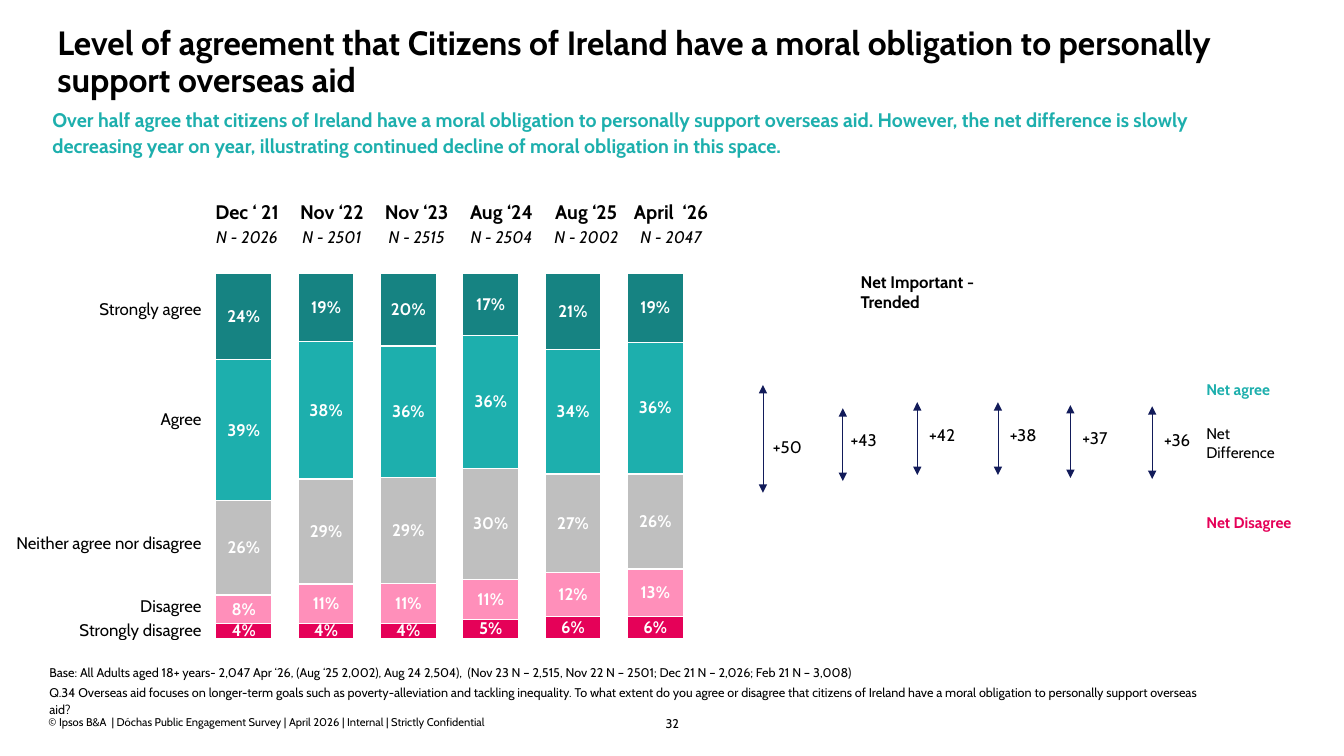
from lxml import etree
from pptx import Presentation
from pptx import util as u
from pptx.chart import data as chart_data
from pptx.dml.color import RGBColor
from pptx.enum import chart as ch
from pptx.enum import shapes, text
from pptx.oxml import ns

BLACK = RGBColor(0, 0, 0)
WHITE = RGBColor(255, 255, 255)
TEAL = RGBColor(0x1D, 0xAF, 0xAD)
DARK_TEAL = RGBColor(0x16, 0x83, 0x82)
GREY = RGBColor(0xBF, 0xBF, 0xBF)
PINK = RGBColor(0xFF, 0x8F, 0xBA)
CRIMSON = RGBColor(0xE5, 0x01, 0x58)
NAVY = RGBColor(0x12, 0x1B, 0x5A)

LEFT, CENTER, RIGHT = text.PP_ALIGN.LEFT, text.PP_ALIGN.CENTER, text.PP_ALIGN.RIGHT
TOP, MIDDLE, BOTTOM = (text.MSO_ANCHOR.TOP, text.MSO_ANCHOR.MIDDLE,
                       text.MSO_ANCHOR.BOTTOM)

WAVES = [("Dec ‘ 21", "N - 2026"), ("Nov ‘22", "N - 2501"), ("Nov ‘23", "N - 2515"),
         ("Aug ‘24", "N - 2504"), ("Aug ‘25", "N - 2002"), ("April  ‘26", "N - 2047")]
ANSWERS = [
    ("Strongly agree", 54, DARK_TEAL, (24, 19, 20, 17, 21, 19)),
    ("Agree", 103.7, TEAL, (39, 38, 36, 36, 34, 36)),
    ("Neither agree nor disagree", 72.7, GREY, (26, 29, 29, 30, 27, 26)),
    ("Disagree", 18, PINK, (8, 11, 11, 11, 12, 13)),
    ("Strongly disagree", 13, CRIMSON, (4, 4, 4, 5, 6, 6)),
]
NET_ARROWS = [
    ("+50", 545, 275, 77, 545, 308.2),
    ("+43", 602, 291.6, 52, 600.5, 303.1),
    ("+42", 655.2, 287.3, 52, 656.6, 300.2),
    ("+38", 712.8, 287.3, 52, 714.2, 299.5),
    ("+37", 764.6, 289.4, 52, 766.1, 301.7),
    ("+36", 823, 290.2, 52, 824.4, 303.1),
]


class SlideBuilder:
    font_name = "Cabin"

    def __init__(self, slide):
        self.slide = slide

    def style(self, font, size, color=BLACK, bold=False, italic=False):
        font.name = self.font_name
        font.size = u.Pt(size)
        font.bold = bold
        font.italic = italic
        font.color.rgb = color

    def add_words(self, paragraph, words, size, align=LEFT, **look):
        paragraph.alignment = align
        run = paragraph.add_run()
        run.text = words
        self.style(run.font, size, **look)

    def fill_frame(self, shape, box, lines, size, inset=True, anchor=TOP, align=LEFT,
                   spacing=1.0, after=0, **look):
        shape.left, shape.top, shape.width, shape.height = map(u.Pt, box)
        frame = shape.text_frame
        frame.word_wrap = True
        frame.auto_size = text.MSO_AUTO_SIZE.NONE
        frame.vertical_anchor = anchor
        frame.margin_left = frame.margin_right = u.Pt(7.2 if inset else 0)
        frame.margin_top = frame.margin_bottom = u.Pt(3.6 if inset else 0)
        for number, words in enumerate(lines):
            paragraph = frame.add_paragraph() if number else frame.paragraphs[0]
            paragraph.line_spacing = spacing
            paragraph.space_before = u.Pt(0)
            paragraph.space_after = u.Pt(after)
            self.add_words(paragraph, words, size, align, **look)

    def placeholder(self, idx, box, lines, size, **options):
        self.fill_frame(self.slide.placeholders[idx], box, lines, size, **options)

    def label(self, box, words, size, **options):
        shape = self.slide.shapes.add_textbox(*map(u.Pt, box))
        self.fill_frame(shape, box, [words], size, **options)

    def table(self, left, top, widths, heights, rows, looks, align):
        frame = self.slide.shapes.add_table(
            len(heights), len(widths), u.Pt(left), u.Pt(top),
            u.Pt(sum(widths)), u.Pt(sum(heights)))
        table = frame.table
        table.first_row = table.horz_banding = False
        for column, width in zip(table.columns, widths):
            column.width = u.Pt(width)
        for row, height, entries, look in zip(table.rows, heights, rows, looks):
            row.height = u.Pt(height)
            for cell, words in zip(row.cells, entries):
                cell.fill.background()
                cell.vertical_anchor = MIDDLE
                cell.margin_left = cell.margin_right = cell.margin_top = u.Pt(0.7)
                cell.margin_bottom = u.Pt(0)
                self.add_words(cell.text_frame.paragraphs[0], words, align=align, **look)

    def double_arrow(self, x, top, length):
        line = self.slide.shapes.add_connector(
            shapes.MSO_CONNECTOR.STRAIGHT, u.Pt(x), u.Pt(top), u.Pt(x), u.Pt(top + length))
        line.line.color.rgb = NAVY
        line.line.width = u.Pt(0.5)
        properties = line._element.spPr
        outline = properties.find(ns.qn("a:ln"))
        for end in ("a:headEnd", "a:tailEnd"):
            etree.SubElement(outline, ns.qn(end), type="triangle")
        etree.SubElement(properties, ns.qn("a:effectLst"))

    def stacked_chart(self, box, answers):
        data = chart_data.CategoryChartData()
        data.categories = [str(number + 1) for number in range(len(WAVES))]
        for name, _, _, values in answers:
            data.add_series(name, values)
        chart = self.slide.shapes.add_chart(
            ch.XL_CHART_TYPE.COLUMN_STACKED_100, *map(u.Pt, box), data).chart
        chart.has_legend = chart.has_title = False
        self.style(chart.font, 12, WHITE, bold=True)
        chart.category_axis.visible = False
        chart.value_axis.visible = False
        chart.value_axis.has_major_gridlines = False
        chart.value_axis.reverse_order = True
        plot = chart.plots[0]
        plot.vary_by_categories = False
        plot.gap_width = 47
        plot.overlap = 100
        for series, (_, _, color, _) in zip(plot.series, answers):
            series.format.fill.solid()
            series.format.fill.fore_color.rgb = color
            series.format.line.color.rgb = WHITE
            series.format.line.width = u.Pt(1)
            labels = series.data_labels
            labels.show_value = True
            labels.number_format = '#"%"'
            labels.number_format_is_linked = False
            labels.position = ch.XL_LABEL_POSITION.CENTER
            self.style(labels.font, 12, WHITE, bold=True)
        area = chart._chartSpace.chart.plotArea
        for layout in area.findall(ns.qn("c:layout")):
            area.remove(layout)
        layout = etree.Element(ns.qn("c:layout"))
        manual = etree.SubElement(layout, ns.qn("c:manualLayout"))
        for tag, value in (("layoutTarget", "inner"), ("xMode", "edge"), ("yMode", "edge"),
                           ("x", "0"), ("y", "0.03"), ("w", "1"), ("h", "0.92")):
            etree.SubElement(manual, ns.qn("c:" + tag), val=value)
        area.insert(0, layout)


def main():
    presentation = Presentation()
    presentation.slide_width, presentation.slide_height = u.Pt(960), u.Pt(540)
    slide = presentation.slides.add_slide(presentation.slide_layouts[4])
    for idx in (2, 4):
        unused = slide.placeholders[idx]._element
        unused.getparent().remove(unused)
    builder = SlideBuilder(slide)

    builder.label((460.8, 510.5, 38.9, 10.8), "32", 9, inset=False, align=CENTER, spacing=1.1)
    builder.label((34.6, 511.2, 439.2, 9.4),
                  "© Ipsos B&A  | Dóchas Public Engagement Survey | April 2026 | Internal"
                  " | Strictly Confidential", 8, inset=False, anchor=BOTTOM)
    builder.placeholder(
        0, (33.8, 14.4, 888.5, 61.2),
        ["Level of agreement that Citizens of Ireland have a moral obligation to personally"
         " support overseas aid"], 24, anchor=MIDDLE, spacing=0.9, bold=True)
    builder.placeholder(
        1, (37.4, 75.6, 874.8, 44.6),
        ["Over half agree that citizens of Ireland have a moral obligation to personally support"
         " overseas aid. However, the net difference is slowly decreasing year on year,"
         " illustrating continued decline of moral obligation in this space."],
        14, inset=False, spacing=1.1, after=4, color=TEAL, bold=True)
    builder.placeholder(
        3, (35.3, 473, 835.2, 51.1),
        ["Base: All Adults aged 18+ years- 2,047 Apr ‘26, (Aug ‘25 2,002), Aug 24 2,504),"
         "  (Nov 23 N – 2,515, Nov 22 N – 2501; Dec 21 N – 2,026; Feb 21 N – 3,008)",
         "Q.34 Overseas aid focuses on longer-term goals such as poverty-alleviation and"
         " tackling inequality. To what extent do you agree or disagree that citizens of"
         " Ireland have a moral obligation to personally support overseas aid?"],
        9, inset=False, spacing=1.15, after=2)

    builder.stacked_chart((144.7, 186.5, 352.8, 283.7), ANSWERS)
    builder.table(0, 193.7, [144.7], [answer[1] for answer in ANSWERS],
                  [[answer[0]] for answer in ANSWERS], [dict(size=12)] * len(ANSWERS), RIGHT)
    builder.table(146.2, 142.6, [60.6] * len(WAVES), [16.6, 18], list(zip(*WAVES)),
                  [dict(size=14, bold=True), dict(size=12, italic=True)], CENTER)

    builder.label((607.7, 190.8, 136.8, 21.6), "Net Important - Trended", 12, bold=True)
    builder.label((854.6, 267.8, 62.6, 20.9), "Net agree", 11, color=TEAL, bold=True)
    builder.label((854.6, 299.5, 79, 20.9), "Net Difference", 11)
    builder.label((854.6, 362.9, 77.8, 20.9), "Net Disagree", 11, color=CRIMSON, bold=True)
    for words, x, top, length, label_left, label_top in NET_ARROWS:
        builder.double_arrow(x, top, length)
        builder.label((label_left, label_top, 51.1, 21.6), words, 12)

    presentation.save("out.pptx")


if __name__ == "__main__":
    main()
